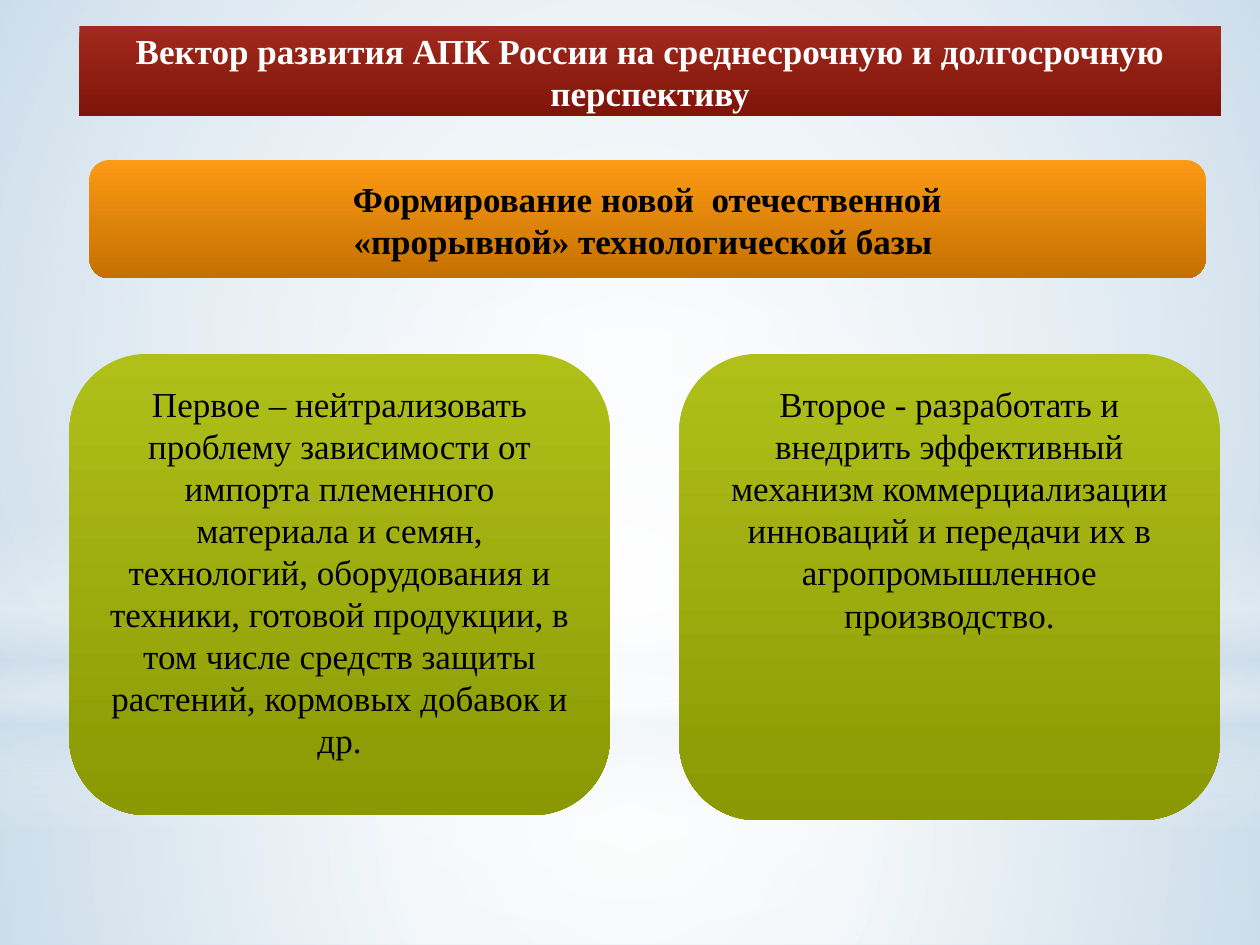
from lxml import etree
from pptx import Presentation
from pptx.dml.color import RGBColor
from pptx.enum import shapes, text
from pptx.oxml import ns
from pptx.util import Inches, Pt


def tint(shape, stops, round_=False):
    """Give a shape a gradient (position, colour, opacity), no line, no shadow."""
    props = shape.element.spPr
    grad = etree.SubElement(props, ns.qn("a:gradFill"), rotWithShape="1")
    row = etree.SubElement(grad, ns.qn("a:gsLst"))
    for pos, hue, *alpha in stops:
        stop = etree.SubElement(row, ns.qn("a:gs"), pos=str(pos * 1000))
        color = etree.SubElement(stop, ns.qn("a:srgbClr"), val=hue)
        if alpha:
            etree.SubElement(color, ns.qn("a:alpha"), val=str(alpha[0] * 1000))
    if round_:
        way = etree.SubElement(grad, ns.qn("a:path"), path="circle")
        mid = {side: "50000" for side in "ltrb"}
        etree.SubElement(way, ns.qn("a:fillToRect"), **mid)
    else:
        etree.SubElement(grad, ns.qn("a:lin"), ang="5400000", scaled="0")
    shape.line.fill.background()
    shape.shadow.inherit = False


def write(shape, lines, hue, bold, anchor):
    """Fill a shape with centred paragraphs."""
    frame = shape.text_frame
    look = {"word_wrap": True, "auto_size": text.MSO_AUTO_SIZE.NONE,
            "vertical_anchor": anchor}
    for key, val in look.items():
        setattr(frame, key, val)
    frame.text = "\n".join(lines)
    font = {"name": "Times New Roman", "size": Pt(20), "bold": bold}
    for para in frame.paragraphs:
        para.alignment = text.PP_ALIGN.CENTER
        for run in para.runs:
            for key, val in font.items():
                setattr(run.font, key, val)
            run.font.color.rgb = RGBColor.from_string(hue)


deck = Presentation()
deck.slide_width, deck.slide_height = Inches(10), Inches(7.5)
slide = deck.slides.add_slide(deck.slide_layouts[5])
kind = shapes.MSO_SHAPE
mid, top = text.MSO_ANCHOR.MIDDLE, text.MSO_ANCHOR.TOP

# Backdrop: pale blue with soft glows across the full width
back = slide.background.fill
back.solid()
back.fore_color.rgb = RGBColor.from_string("CCDDEA")
pale, blue = "FFFFFF", "CCDDEA"
glows = [
    (kind.RECTANGLE, 5.58, 1.92, True,
     [(0, pale, 91), (37, pale, 76), (100, blue, 79)]),
    (kind.RECTANGLE, 0, 5.58, True,
     [(0, pale, 89), (48, pale, 62), (100, blue, 79)]),
    (kind.RECTANGLE, 4.12, 2.5, False,
     [(0, pale, 0), (29, pale, 30), (45, blue, 40),
      (55, pale, 26), (65, blue, 60), (100, pale, 0)]),
    (kind.OVAL, 1.75, 5.58, True, [(0, pale), (56, pale, 0)]),
]
for form, y, high, round_, stops in glows:
    glow = slide.shapes.add_shape(
        form, 0, Inches(y), deck.slide_width, Inches(high))
    tint(glow, stops, round_)

# Title: red rounded bar, in front of the backdrop
title = slide.shapes.title
title.element.getparent().append(title.element)
place = {"left": 0.63, "top": 0.21, "width": 9.06, "height": 0.71}
for key, val in place.items():
    setattr(title, key, Inches(val))
geom = etree.SubElement(
    title.element.spPr, ns.qn("a:prstGeom"), prst="roundRect")
etree.SubElement(geom, ns.qn("a:avLst"))
tint(title, [(0, "A1291D"), (100, "7F1408")])
write(title, ["Вектор развития АПК России на среднесрочную и долгосрочную "
              "перспективу"], "FFFFFF", True, mid)

# Orange goal bar and the two green task cards
green = ("B0C019", "8A9803")
cards = [
    ((0.71, 1.27, 8.86, 0.94), ("FD9A15", "C47000"), True, mid,
     ["Формирование новой  отечественной",
      "«прорывной» технологической базы "]),
    ((0.55, 2.81, 4.29, 3.66), green, False, top,
     ["Первое – нейтрализовать проблему зависимости от импорта племенного "
      "материала и семян, технологий, оборудования и техники, готовой "
      "продукции, в том числе средств защиты растений, кормовых добавок "
      "и др."]),
    ((5.39, 2.81, 4.29, 3.7), green, False, top,
     ["Второе - разработать и внедрить эффективный механизм "
      "коммерциализации инноваций и передачи их в агропромышленное "
      "производство."]),
]
for box, (light, dark), bold, anchor, lines in cards:
    card = slide.shapes.add_shape(kind.ROUNDED_RECTANGLE, *map(Inches, box))
    tint(card, [(0, light), (100, dark)])
    write(card, lines, "000000", bold, anchor)

deck.save("out.pptx")
